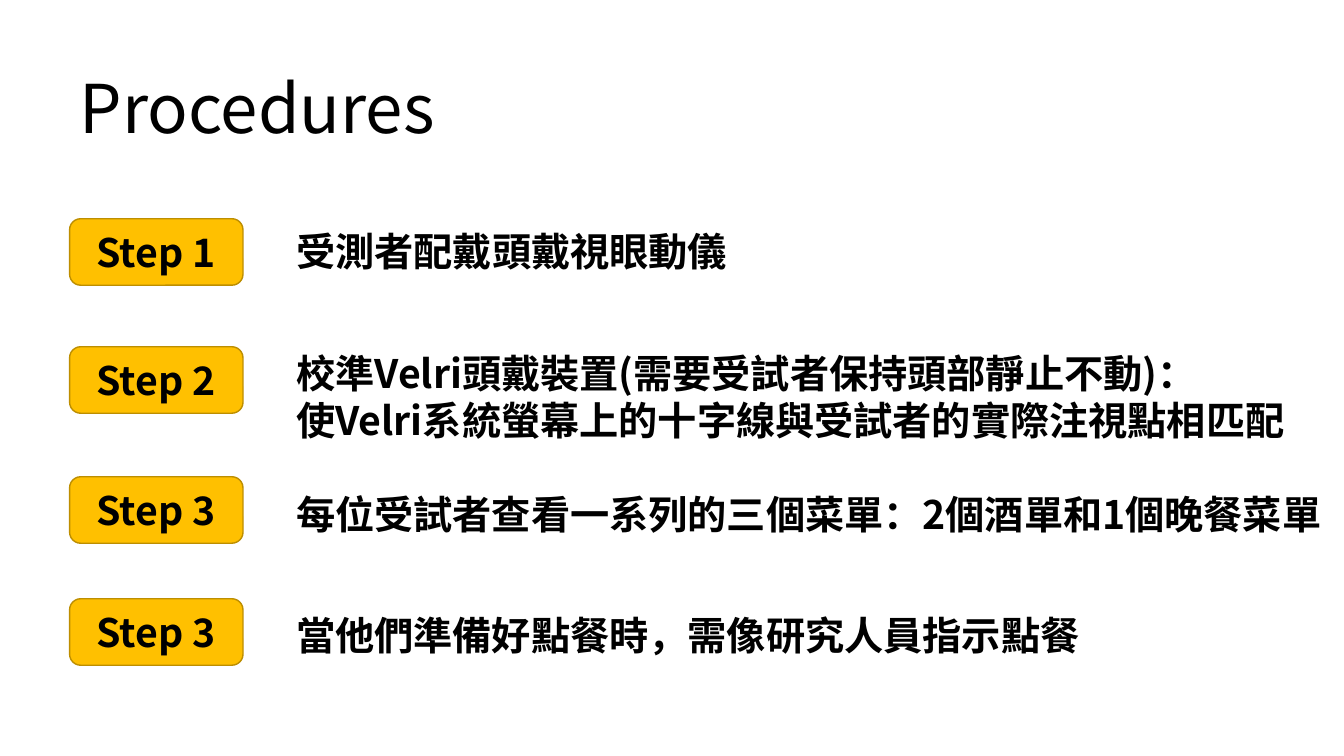
from lxml.etree import SubElement
from pptx import Presentation
from pptx.dml.color import RGBColor
from pptx.enum.shapes import MSO_SHAPE
from pptx.enum.text import MSO_ANCHOR, MSO_AUTO_SIZE, PP_ALIGN
from pptx.oxml.ns import qn
from pptx.util import Inches, Pt

FONT = "Noto Sans CJK SC"
BLACK = RGBColor(0x00, 0x00, 0x00)
AMBER = RGBColor(0xFF, 0xC0, 0x00)
DARK_AMBER = RGBColor(0xBD, 0x8E, 0x00)

LEFT = 0.69
TEXT_LEFT = 2.84
BADGE_WIDTH, BADGE_HEIGHT = 1.72, 0.66

# label, badge top, text top, text width, text height, lines
STEPS = [
    ("Step 1", 2.17, 2.21, 4.81, 0.57, ["受測者配戴頭戴視眼動儀"]),
    ("Step 2", 3.44, 3.42, 11.18, 1.04,
     ["校準Velri頭戴裝置(需要受試者保持頭部靜止不動)：",
      "使Velri系統螢幕上的十字線與受試者的實際注視點相匹配"]),
    ("Step 3", 4.73, 4.82, 10.4, 0.57,
     ["每位受試者查看一系列的三個菜單：2個酒單和1個晚餐菜單"]),
    ("Step 3", 5.94, 6.02, 8.33, 0.57,
     ["當他們準備好點餐時，需像研究人員指示點餐"]),
]


def write_text(frame, lines, size=28, bold=True, align=PP_ALIGN.LEFT):
    frame.text = "\n".join(lines)
    for para in frame.paragraphs:
        para.alignment = align
        para.font.name = FONT
        para.font.size = Pt(size)
        para.font.bold = bold
        para.font.color.rgb = BLACK
        properties = para._p.get_or_add_pPr().find(qn("a:defRPr"))
        SubElement(properties, qn("a:ea")).set("typeface", FONT)


def set_title(page, text):
    title = page.shapes.title
    title.left, title.top = Inches(LEFT), Inches(0.61)
    title.width, title.height = Inches(3.75), Inches(0.91)
    frame = title.text_frame
    frame.word_wrap = False
    frame.auto_size = MSO_AUTO_SIZE.SHAPE_TO_FIT_TEXT
    frame.vertical_anchor = MSO_ANCHOR.TOP
    write_text(frame, [text], size=48, bold=False)


def add_badge(page, label, top):
    badge = page.shapes.add_shape(
        MSO_SHAPE.ROUNDED_RECTANGLE, Inches(LEFT), Inches(top),
        Inches(BADGE_WIDTH), Inches(BADGE_HEIGHT))
    badge.shadow.inherit = False
    badge.fill.solid()
    badge.fill.fore_color.rgb = AMBER
    badge.line.color.rgb = DARK_AMBER
    badge.line.width = Pt(1)
    badge.text_frame.vertical_anchor = MSO_ANCHOR.MIDDLE
    write_text(badge.text_frame, [label], align=PP_ALIGN.CENTER)


def add_description(page, lines, top, width, height):
    box = page.shapes.add_textbox(
        Inches(TEXT_LEFT), Inches(top), Inches(width), Inches(height))
    box.text_frame.word_wrap = True
    box.text_frame.auto_size = MSO_AUTO_SIZE.SHAPE_TO_FIT_TEXT
    write_text(box.text_frame, lines)


def main():
    deck = Presentation()
    deck.slide_width, deck.slide_height = Inches(13.33), Inches(7.5)
    page = deck.slides.add_slide(deck.slide_layouts.get_by_name("Title Only"))
    set_title(page, "Procedures")
    for label, badge_top, text_top, width, height, lines in STEPS:
        add_badge(page, label, badge_top)
        add_description(page, lines, text_top, width, height)
    deck.save("out.pptx")


if __name__ == "__main__":
    main()
